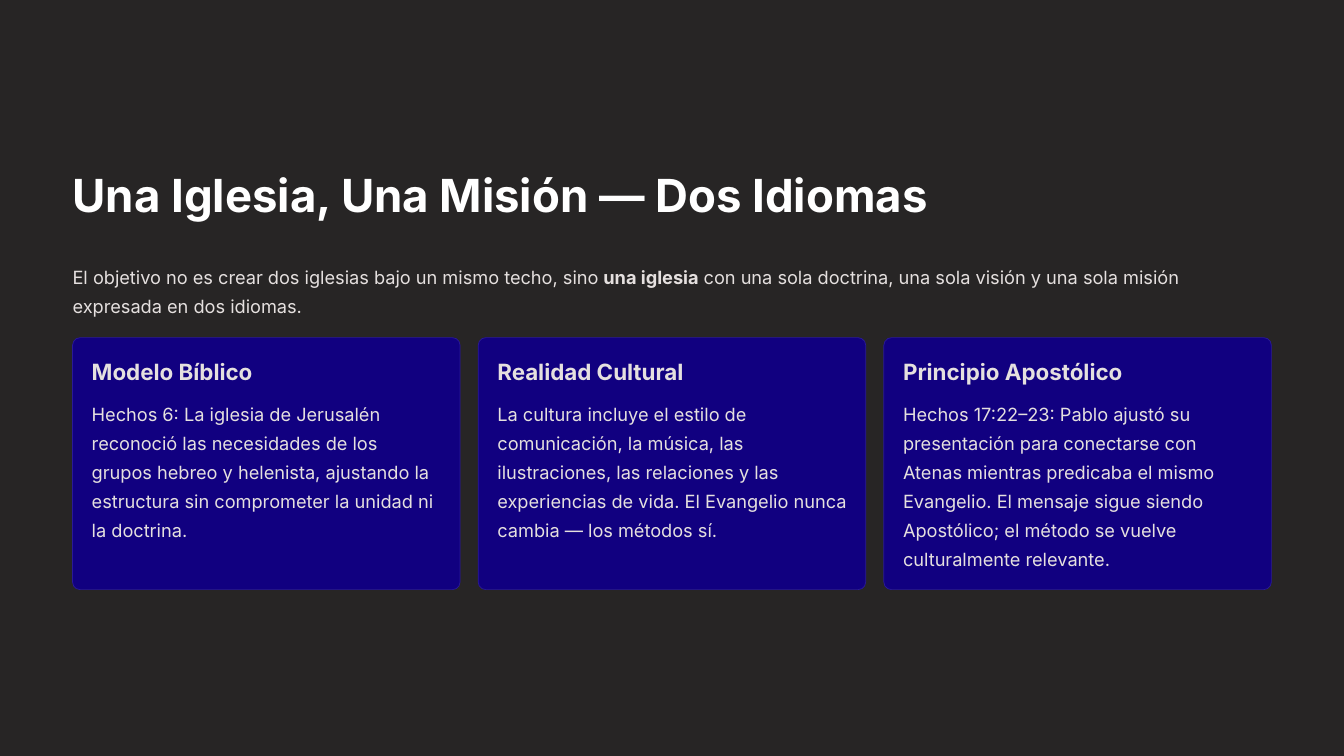
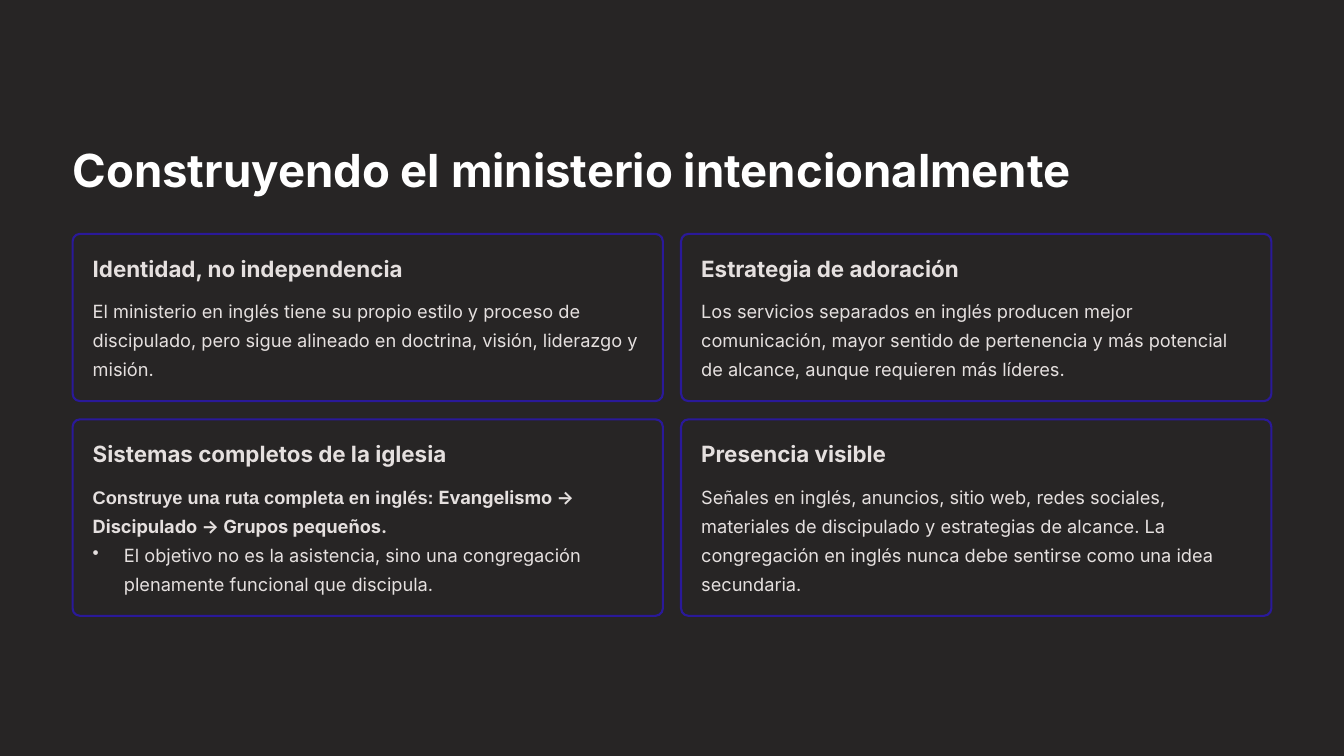
from dataclasses import dataclass

from lxml import etree
from pptx import Presentation
from pptx import util as u
from pptx.dml import color
from pptx.enum import shapes, text
from pptx.oxml import ns


@dataclass(frozen=True)
class Theme:
    background: str = "272525"
    title: str = "FFFFFF"
    ink: str = "E5E0DF"
    card: str = "110080"
    border: str = "2A1999"
    font: str = "Inter"
    title_size: float = 32.5
    heading_size: float = 16
    body_size: float = 13
    heading_spacing: float = 1.04
    body_spacing: float = 1.33


@dataclass(frozen=True)
class CardStyle:
    fill: str
    line_width: float
    inset: float


THEME = Theme()
FILLED = CardStyle(THEME.card, 0.5, 0.19)
OUTLINED = CardStyle(THEME.background, 1.5, 0.2)

SLIDE_WIDTH, SLIDE_HEIGHT = 13.33, 7.5
LEFT, CONTENT_WIDTH, GAP = 0.72, 11.89, 0.18
CORNER_RADIUS = 0.075
HEADING_HEIGHT, BODY_OFFSET = 0.28, 0.39
BULLET_INDENT = 0.31

TITLE = {"name": THEME.font, "size": u.Pt(THEME.title_size), "bold": True}
HEADING = {"name": THEME.font, "size": u.Pt(THEME.heading_size), "bold": True}
BODY = {"name": THEME.font, "size": u.Pt(THEME.body_size), "bold": False}
STRONG = {"bold": True}
STRONG_ARIAL = {"bold": True, "name": "Arial"}


@dataclass(frozen=True)
class Paragraph:
    runs: tuple
    bullet: bool = False


def plain(content):
    return [Paragraph(((content, {}),))]


def set_values(target, values):
    for name, value in values.items():
        setattr(target, name, value)


def rgb(value):
    return color.RGBColor.from_string(value)


def add_bullet(paragraph):
    properties = paragraph._p.get_or_add_pPr()
    properties.set("marL", str(u.Inches(BULLET_INDENT)))
    properties.set("indent", str(u.Inches(-BULLET_INDENT)))
    bullet = etree.SubElement(properties, ns.qn("a:buChar"))
    bullet.set("char", "•")


def add_text(slide, box, paragraphs, style, spacing, ink=THEME.ink):
    frame = slide.shapes.add_textbox(*map(u.Inches, box)).text_frame
    set_values(frame, {
        "word_wrap": True,
        "vertical_anchor": text.MSO_ANCHOR.TOP,
        "margin_left": 0,
        "margin_top": 0,
        "margin_right": 0,
        "margin_bottom": 0,
    })
    for index, item in enumerate(paragraphs):
        paragraph = frame.add_paragraph() if index else frame.paragraphs[0]
        paragraph.line_spacing = spacing
        if item.bullet:
            add_bullet(paragraph)
        for content, changes in item.runs:
            run = paragraph.add_run()
            run.text = content
            set_values(run.font, {**style, **changes})
            run.font.color.rgb = rgb(ink)


def add_title(slide, top, content):
    add_text(slide, (LEFT, top, CONTENT_WIDTH, 0.57), plain(content),
             TITLE, THEME.heading_spacing, THEME.title)


def add_card(slide, box, style, heading, paragraphs):
    left, top, width, height = box
    card = slide.shapes.add_shape(
        shapes.MSO_SHAPE.ROUNDED_RECTANGLE, *map(u.Inches, box))
    card.adjustments[0] = CORNER_RADIUS / min(width, height)
    card.shadow.inherit = False
    card.fill.solid()
    card.fill.fore_color.rgb = rgb(style.fill)
    card.line.color.rgb = rgb(THEME.border)
    card.line.width = u.Pt(style.line_width)

    text_left, text_top = left + style.inset, top + style.inset
    text_width = width - 2 * style.inset
    add_text(slide, (text_left, text_top, text_width, HEADING_HEIGHT),
             plain(heading), HEADING, THEME.heading_spacing)
    body_height = height - 2 * style.inset - BODY_OFFSET
    add_text(slide, (text_left, text_top + BODY_OFFSET, text_width, body_height),
             paragraphs, BODY, THEME.body_spacing)


def add_card_row(slide, top, height, style, cards):
    width = (CONTENT_WIDTH - GAP * (len(cards) - 1)) / len(cards)
    for column, (heading, paragraphs) in enumerate(cards):
        left = LEFT + column * (width + GAP)
        add_card(slide, (left, top, width, height), style, heading, paragraphs)


def add_slide(presentation):
    slide = presentation.slides.add_slide(presentation.slide_layouts[6])
    slide.background.fill.solid()
    slide.background.fill.fore_color.rgb = rgb(THEME.background)
    return slide


def build_mission_slide(presentation):
    slide = add_slide(presentation)
    add_title(slide, 1.64, "Una Iglesia, Una Misión — Dos Idiomas")
    introduction = Paragraph((
        ("El objetivo no es crear dos iglesias bajo un mismo techo, sino ", {}),
        ("una iglesia", STRONG),
        (" con una sola doctrina, una sola visión y una sola misión "
         "expresada en dos idiomas.", {}),
    ))
    add_text(slide, (LEFT, 2.57, CONTENT_WIDTH, 0.58), [introduction],
             BODY, THEME.body_spacing)
    add_card_row(slide, 3.35, 2.5, FILLED, [
        ("Modelo Bíblico", plain(
            "Hechos 6: La iglesia de Jerusalén reconoció las necesidades de los "
            "grupos hebreo y helenista, ajustando la estructura sin comprometer "
            "la unidad ni la doctrina.")),
        ("Realidad Cultural", plain(
            "La cultura incluye el estilo de comunicación, la música, las "
            "ilustraciones, las relaciones y las experiencias de vida. "
            "El Evangelio nunca cambia — los métodos sí.")),
        ("Principio Apostólico", plain(
            "Hechos 17:22–23: Pablo ajustó su presentación para conectarse con "
            "Atenas mientras predicaba el mismo Evangelio. El mensaje sigue "
            "siendo Apostólico; el método se vuelve culturalmente relevante.")),
    ])


def build_ministry_slide(presentation):
    slide = add_slide(presentation)
    add_title(slide, 1.39, "Construyendo el ministerio intencionalmente")
    systems = [
        Paragraph((
            ("Construye una ruta completa en inglés: ", STRONG_ARIAL),
            ("Evangelismo → Discipulado → Grupos pequeños.", STRONG),
        )),
        Paragraph((
            ("El objetivo no es la asistencia, sino una congregación "
             "plenamente funcional que discipula.", {}),
        ), bullet=True),
    ]
    rows = [
        (1.66, [
            ("Identidad, no independencia", plain(
                "El ministerio en inglés tiene su propio estilo y proceso de "
                "discipulado, pero sigue alineado en doctrina, visión, "
                "liderazgo y misión.")),
            ("Estrategia de adoración", plain(
                "Los servicios separados en inglés producen mejor comunicación, "
                "mayor sentido de pertenencia y más potencial de alcance, "
                "aunque requieren más líderes.")),
        ]),
        (1.95, [
            ("Sistemas completos de la iglesia", systems),
            ("Presencia visible", plain(
                "Señales en inglés, anuncios, sitio web, redes sociales, "
                "materiales de discipulado y estrategias de alcance. "
                "La congregación en inglés nunca debe sentirse como una idea "
                "secundaria.")),
        ]),
    ]
    top = 2.32
    for height, cards in rows:
        add_card_row(slide, top, height, OUTLINED, cards)
        top += height + GAP


def main():
    presentation = Presentation()
    presentation.slide_width = u.Inches(SLIDE_WIDTH)
    presentation.slide_height = u.Inches(SLIDE_HEIGHT)
    build_mission_slide(presentation)
    build_ministry_slide(presentation)
    presentation.save("out.pptx")


if __name__ == "__main__":
    main()
